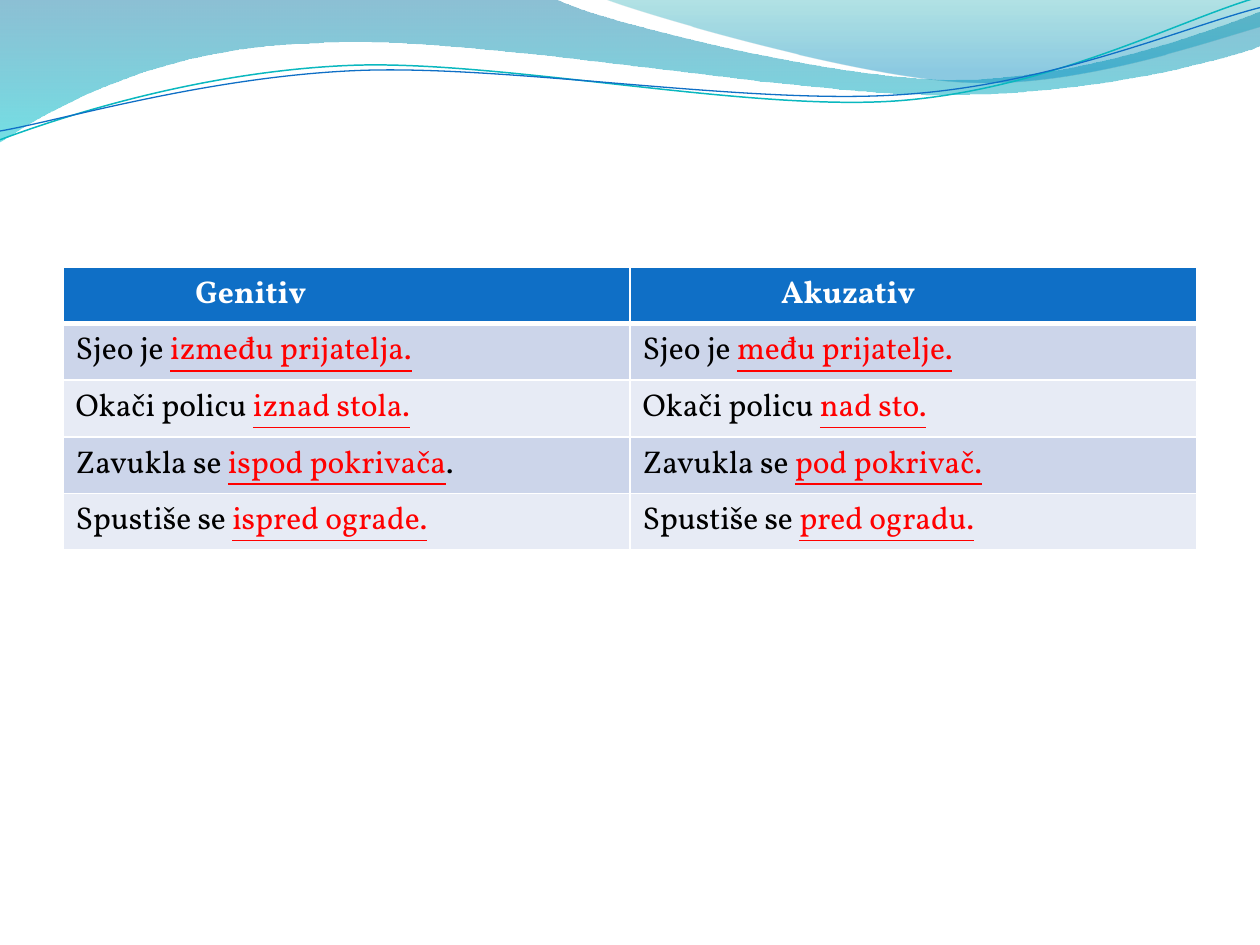
from math import cos, radians, sin

from lxml.etree import SubElement
from pptx import Presentation
from pptx.dml.color import RGBColor as RGB
from pptx.oxml.ns import qn
from pptx.util import Inches, Pt

COLORS = {
    "white": "FFFFFF", "black": "000000", "red": "FF0000", "blue": "0F6FC6",
    "band_dark": "CCD5EA", "band_light": "E7EBF5", "teal": "0AB8BF",
    "wave_blue": "0074A1", "wave_cyan": "00C6CF",
    "crest_teal": "00A1A9", "crest_blue": "008BBF",
}


def add_curve(shapes, frame, segments, close, rotation=0):
    left, top, width, height = frame
    middle_x, middle_y = left + width / 2, top + height / 2
    turn = radians(-rotation)
    ends = [(Inches(s[-2]), Inches(s[-1])) for s in segments]
    builder = shapes.build_freeform(*ends[0])
    builder.add_line_segments(ends[1:], close=close)
    curve = builder.convert_to_shape()
    curve.left, curve.top, curve.width, curve.height = map(Inches, frame)
    curve.rotation = rotation
    curve.shadow.inherit = False
    outline = next(curve._element.iter(qn("a:path")))
    outline.set("w", str(curve.width))
    outline.set("h", str(curve.height))
    for step, segment in zip(list(outline), segments):
        if len(segment) == 6:
            step.tag = qn("a:cubicBezTo")
        for point in list(step):
            step.remove(point)
        for x, y in zip(segment[::2], segment[1::2]):
            dx, dy = x - middle_x, y - middle_y
            across = width / 2 + dx * cos(turn) - dy * sin(turn)
            down = height / 2 + dx * sin(turn) + dy * cos(turn)
            SubElement(step, qn("a:pt"), x=str(Inches(across)), y=str(Inches(down)))
    return curve


def add_border(cell, side, width):
    line = SubElement(cell._tc.get_or_add_tcPr(), qn(f"a:ln{side}"), w=str(Pt(width)))
    fill = SubElement(line, qn("a:solidFill"))
    SubElement(fill, qn("a:srgbClr"), val=COLORS["white"])


prs = Presentation()
prs.slide_width, prs.slide_height = Inches(10), Inches(7.5)
slide = prs.slides.add_slide(prs.slide_layouts[6])

waves = [
    ((-0.01, -0.01, 10.02, 1.14),
     [(0, 0), (4.4, -0.01), (4.76, 0.17, 6.64, 0.63, 7.58, 0.63),
      (8.53, 0.63, 9.58, 0.26, 10, 0.09), (10.01, 0.36),
      (9.83, 0.44, 8.7, 0.76, 7.46, 0.75), (6.22, 0.75, 3.82, 0.28, 2.57, 0.34),
      (1.29, 0.36, 0.46, 0.83, -0.01, 1.13), (0, 0)],
     [("wave_blue", 0, 45), ("wave_cyan", 1, 55)]),
    ((4.79, -0.01, 5.21, 0.7),
     [(4.79, -0.01), (5.09, 0.11, 6.82, 0.62, 7.69, 0.65),
      (8.56, 0.69, 9.61, 0.32, 10, 0.21), (10, 0), (4.79, -0.01)],
     [("crest_teal", 0, 30), ("crest_blue", 0.8, 45)]),
]
for frame, segments, stops in waves:
    wave = add_curve(slide.shapes, frame, segments, True)
    wave.line.fill.background()
    wave.fill.gradient()
    wave.fill.gradient_angle = 270
    for stop, (color, position, opacity) in zip(wave.fill.gradient_stops, stops):
        stop.color.rgb = RGB.from_string(COLORS[color])
        stop.position = position
    tints = wave._element.spPr.iter(qn("a:srgbClr"))
    for tint, (color, position, opacity) in zip(tints, stops):
        SubElement(tint, qn("a:alpha"), val=str(opacity * 1000))

strands = [
    ((-0.02, 0.22, 10.02, 0.71),
     [(0, 1.11), (0.48, 0.93, 1.58, 0.57, 2.77, 0.52),
      (3.95, 0.47, 5.93, 0.89, 7.13, 0.8), (8.33, 0.71, 9.38, 0.15, 9.98, -0.02)],
     "teal", 0.85),
    ((-0.02, 0.3, 10.03, 0.58),
     [(0, 1.04), (0.47, 0.96, 1.64, 0.61, 2.83, 0.56),
      (4.03, 0.51, 5.97, 0.84, 7.17, 0.75), (8.36, 0.67, 9.41, 0.21, 10, 0.06)],
     "blue", 0.75),
]
for frame, segments, color, width in strands:
    strand = add_curve(slide.shapes, frame, segments, False, 357.3)
    strand.fill.background()
    strand.line.color.rgb = RGB.from_string(COLORS[color])
    strand.line.width = Pt(width)

headings = [("Genitiv", 1.05), ("Akuzativ", 1.2)]
examples = [
    [("Sjeo je ", "između prijatelja.", ""), ("Sjeo je ", "među prijatelje.", "")],
    [("Okači policu ", "iznad stola.", ""), ("Okači policu ", "nad sto.", "")],
    [("Zavukla se ", "ispod pokrivača", "."), ("Zavukla se ", "pod pokrivač.", "")],
    [("Spustiše se ", "ispred ograde.", ""), ("Spustiše se ", "pred ogradu.", "")],
]
cases = slide.shapes.add_table(5, 2, Inches(0.5), Inches(2.12), Inches(9), Inches(2.03)).table
for row in cases.rows:
    row.height = Inches(0.41)

for r in range(5):
    for c in range(2):
        cell = cases.cell(r, c)
        for side in "LRTB":
            add_border(cell, side, 3 if (r, side) in [(0, "B"), (1, "T")] else 1)
        band = "blue" if r == 0 else "band_dark" if r % 2 else "band_light"
        cell.fill.solid()
        cell.fill.fore_color.rgb = RGB.from_string(COLORS[band])
        sentence = cell.text_frame.paragraphs[0]
        sentence.font.name = "Vollkorn"
        sentence.font.size = Pt(18)
        sentence.font.bold = r == 0
        if r == 0:
            heading, indent = headings[c]
            cell.margin_left = Inches(indent)
            parts = [(heading, "white", False)]
        else:
            before, phrase, after = examples[r - 1][c]
            parts = [(before, "black", False), (phrase, "red", True), (after, "black", False)]
        for text, color, underlined in parts:
            if text:
                run = sentence.add_run()
                run.text = text
                run.font.color.rgb = RGB.from_string(COLORS[color])
                run.font.underline = underlined

prs.save("out.pptx")
